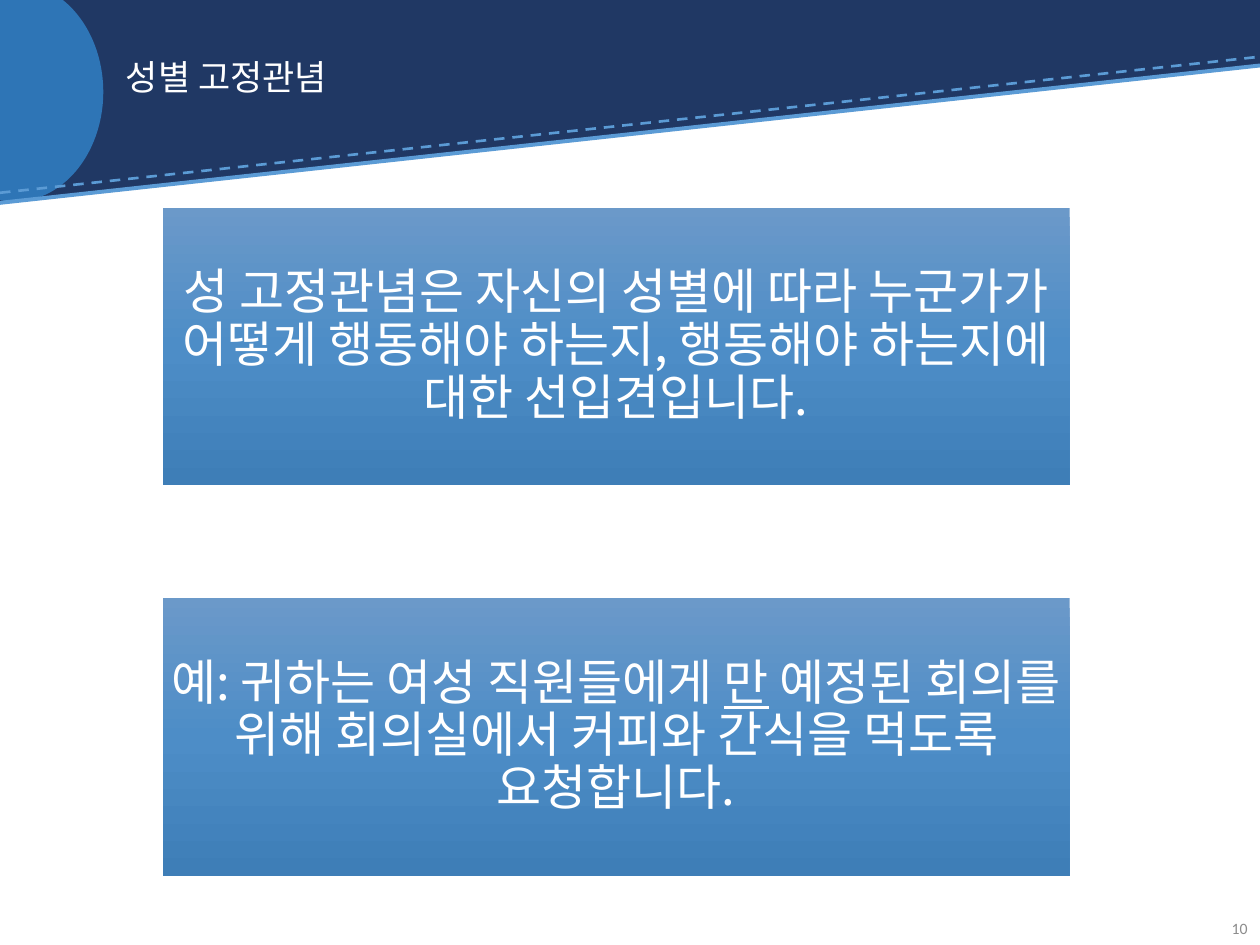
"""Build the slide on gender stereotypes: a slanted banner above two text panels."""
from copy import deepcopy
from dataclasses import dataclass

from lxml import etree
from pptx import Presentation
from pptx.dml.color import RGBColor
from pptx.enum.dml import MSO_LINE
from pptx.enum.shapes import MSO_CONNECTOR, MSO_SHAPE
from pptx.enum.text import MSO_ANCHOR, PP_ALIGN
from pptx.oxml.ns import qn
from pptx.shapes.autoshape import Shape
from pptx.slide import Slide
from pptx.text.text import TextFrame
from pptx.util import Inches, Pt

RECTANGLE, TRIANGLE, ELLIPSE = MSO_SHAPE.RECTANGLE, MSO_SHAPE.RIGHT_TRIANGLE, MSO_SHAPE.OVAL
STRAIGHT, DASH = MSO_CONNECTOR.STRAIGHT, MSO_LINE.DASH
MIDDLE = MSO_ANCHOR.MIDDLE
LEFT, CENTER, RIGHT = PP_ALIGN.LEFT, PP_ALIGN.CENTER, PP_ALIGN.RIGHT

NAVY = RGBColor(0x20, 0x38, 0x64)
BLUE = RGBColor(0x2E, 0x75, 0xB6)
SKY = RGBColor(0x5B, 0x9B, 0xD5)
WHITE = RGBColor(0xFF, 0xFF, 0xFF)
GRAY = RGBColor(0x8C, 0x8C, 0x8C)
PANEL_GRADIENT = (
    (0.0, RGBColor(0x6B, 0x99, 0xC9)),
    (0.5, RGBColor(0x4D, 0x8D, 0xC7)),
    (1.0, RGBColor(0x3E, 0x7E, 0xB7)),
)
KOREAN_FONT = "Noto Sans CJK KR"
NUMBER_FONT = "Calibri"


@dataclass(frozen=True)
class Box:
    left: float
    top: float
    width: float
    height: float

    def lengths(self) -> tuple[Inches, ...]:
        return tuple(Inches(v) for v in (self.left, self.top, self.width, self.height))


@dataclass(frozen=True)
class BannerPart:
    kind: MSO_SHAPE
    box: Box
    color: RGBColor
    flipped: bool = False


@dataclass(frozen=True)
class BannerEdge:
    left_y: float
    right_y: float
    weight: float
    dash: MSO_LINE | None = None


@dataclass(frozen=True)
class Phrase:
    text: str
    underlined: bool = False


@dataclass(frozen=True)
class TextStyle:
    size: float
    align: PP_ALIGN
    color: RGBColor = WHITE
    font: str = KOREAN_FONT
    line_spacing: float = 0.9
    space_after: float = 0


TITLE_STYLE = TextStyle(20, LEFT)
NUMBER_STYLE = TextStyle(9, RIGHT, GRAY, NUMBER_FONT, 1.0, 6)
PANEL_STYLE = TextStyle(28, CENTER, space_after=9.8)

BANNER_PARTS = (
    BannerPart(RECTANGLE, Box(0, 0, 10, 0.52), NAVY),
    BannerPart(TRIANGLE, Box(0, 0.51, 10, 1.09), NAVY, flipped=True),
    BannerPart(ELLIPSE, Box(-0.59, -0.14, 1.41, 1.74), BLUE),
)
BANNER_EDGES = (BannerEdge(1.53, 0.45, 1.5, DASH), BannerEdge(1.61, 0.52, 2.25))

PANEL_TOP, PANEL_PITCH = 1.65, 3.1
PANEL_INSET = 0.02
PANELS = (
    (Phrase("성 고정관념은 자신의 성별에 따라 누군가가 어떻게 행동해야 하는지, "
            "행동해야 하는지에 대한 선입견입니다."),),
    (
        Phrase("예: 귀하는 여성 직원들에게 "),
        Phrase("만", underlined=True),
        Phrase(" 예정된 회의를 위해 회의실에서 커피와 간식을 먹도록 요청합니다."),
    ),
)


def add_plain_shape(slide: Slide, kind: MSO_SHAPE, box: Box) -> Shape:
    shape = slide.shapes.add_shape(kind, *box.lengths())
    shape.shadow.inherit = False
    shape.line.fill.background()
    return shape


def draw_banner_part(slide: Slide, part: BannerPart) -> None:
    shape = add_plain_shape(slide, part.kind, part.box)
    shape.fill.solid()
    shape.fill.fore_color.rgb = part.color
    if part.flipped:
        shape.element.spPr.find(qn("a:xfrm")).set("flipV", "1")


def draw_banner_edge(slide: Slide, edge: BannerEdge) -> None:
    line = slide.shapes.add_connector(
        STRAIGHT, Inches(0), Inches(edge.left_y), Inches(10), Inches(edge.right_y))
    line.line.color.rgb = SKY
    line.line.width = Pt(edge.weight)
    if edge.dash is not None:
        line.line.dash_style = edge.dash
    etree.SubElement(line.element.spPr, qn("a:effectLst"))


def write_text(frame: TextFrame, phrases: tuple[Phrase, ...], style: TextStyle) -> None:
    frame.word_wrap = True
    frame.vertical_anchor = MIDDLE
    paragraph = frame.paragraphs[0]
    paragraph.alignment = style.align
    paragraph.line_spacing = style.line_spacing
    paragraph.space_after = Pt(style.space_after)
    for phrase in phrases:
        run = paragraph.add_run()
        run.text = phrase.text
        run.font.size = Pt(style.size)
        run.font.name = style.font
        run.font.color.rgb = style.color
        run.font.underline = phrase.underlined
        etree.SubElement(run.font._element, qn("a:ea"), typeface=style.font)


def draw_label(slide: Slide, box: Box, text: str, style: TextStyle) -> None:
    label = slide.shapes.add_textbox(*box.lengths())
    write_text(label.text_frame, (Phrase(text),), style)


def draw_panel(slide: Slide, box: Box, phrases: tuple[Phrase, ...]) -> None:
    panel = add_plain_shape(slide, RECTANGLE, box)
    panel.fill.gradient()
    panel.fill.gradient_angle = 270
    stop_list = panel.element.spPr.find(".//" + qn("a:gsLst"))
    stop_list.insert(1, deepcopy(stop_list[0]))
    for stop, (position, color) in zip(panel.fill.gradient_stops, PANEL_GRADIENT):
        stop.position = position
        stop.color.rgb = color
    frame = panel.text_frame
    frame.margin_left = frame.margin_right = Inches(PANEL_INSET)
    frame.margin_top = frame.margin_bottom = Inches(PANEL_INSET)
    write_text(frame, phrases, PANEL_STYLE)


def main() -> None:
    deck = Presentation()
    deck.slide_width, deck.slide_height = Inches(10), Inches(7.5)
    slide = deck.slides.add_slide(deck.slide_layouts[6])
    for part in BANNER_PARTS:
        draw_banner_part(slide, part)
    for edge in BANNER_EDGES:
        draw_banner_edge(slide, edge)
    draw_label(slide, Box(0.9, 0.2, 8.05, 0.86), "성별 고정관념", TITLE_STYLE)
    draw_label(slide, Box(9.47, 7.17, 0.53, 0.4), "10", NUMBER_STYLE)
    for index, phrases in enumerate(PANELS):
        draw_panel(slide, Box(1.29, PANEL_TOP + index * PANEL_PITCH, 7.2, 2.2), phrases)
    deck.save("out.pptx")


if __name__ == "__main__":
    main()
